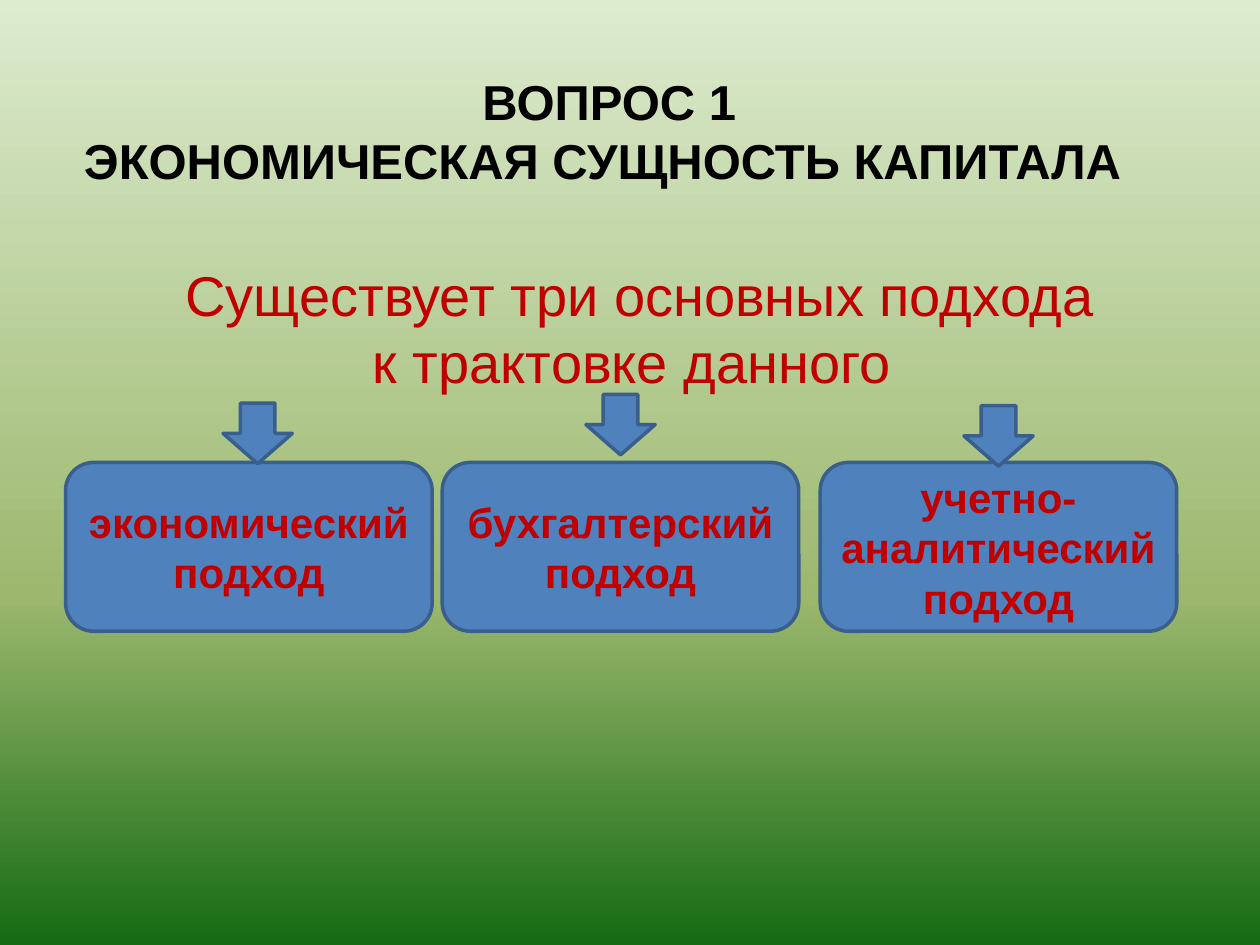
from copy import deepcopy

from pptx import Presentation
from pptx.dml.color import RGBColor
from pptx.enum.shapes import MSO_SHAPE
from pptx.enum.text import MSO_ANCHOR, PP_ALIGN
from pptx.oxml.ns import qn
from pptx.util import Inches, Pt

ROUNDED = MSO_SHAPE.ROUNDED_RECTANGLE
DOWN_ARROW = MSO_SHAPE.DOWN_ARROW
MIDDLE = MSO_ANCHOR.MIDDLE
CENTER = PP_ALIGN.CENTER

BLACK = RGBColor(0x00, 0x00, 0x00)
RED = RGBColor(0xC0, 0x00, 0x00)
BLUE = RGBColor(0x4F, 0x81, 0xBD)
DARK_BLUE = RGBColor(0x3A, 0x5F, 0x8C)
GRADIENT = [
    (0, RGBColor(0xDD, 0xEB, 0xCF)),
    (0.63, RGBColor(0x9C, 0xB8, 0x6E)),
    (1, RGBColor(0x15, 0x6B, 0x13)),
]

TITLE_FONT = {"name": "Arial", "size": Pt(28), "bold": True}
LEAD_FONT = {"name": "Arial", "size": Pt(32), "bold": False}
CARD_FONT = {"name": "Arial", "size": Pt(24), "bold": True}

CARD_TOP, CARD_HEIGHT = 3.67, 1.34
ARROW_WIDTH, ARROW_HEIGHT = 0.55, 0.48
APPROACHES = [
    ("экономический подход", 0.52, 2.91, 1.77, 3.2),
    ("бухгалтерский подход", 3.51, 2.83, 4.65, 3.13),
    ("учетно-аналитический подход", 6.51, 2.83, 7.65, 3.22),
]


def paint_background(slide):
    """Fill the slide with the vertical green gradient."""
    fill = slide.background.fill
    fill.gradient()
    fill.gradient_angle = 270
    stop_list = next(slide.element.iter(qn("a:gsLst")))
    stop_list.insert(1, deepcopy(stop_list[0]))
    for stop, (position, color) in zip(fill.gradient_stops, GRADIENT):
        stop.position = position
        stop.color.rgb = color


def write_lines(tf, lines, font, color):
    """Write each line as a centred paragraph."""
    for i, line in enumerate(lines):
        p = tf.add_paragraph() if i else tf.paragraphs[0]
        p.alignment = CENTER
        r = p.add_run()
        r.text = line
        r.font.color.rgb = color
        for key, value in font.items():
            setattr(r.font, key, value)


def add_heading(slide, box, lines, font, color, wrap):
    """Place a centred text box in the given box."""
    tf = slide.shapes.add_textbox(*map(Inches, box)).text_frame
    tf.word_wrap = wrap
    write_lines(tf, lines, font, color)


def add_blue_shape(slide, kind, box):
    """Place an outlined blue shape in the given box."""
    sp = slide.shapes.add_shape(kind, *map(Inches, box))
    sp.shadow.inherit = False
    sp.fill.solid()
    sp.fill.fore_color.rgb = BLUE
    sp.line.color.rgb = DARK_BLUE
    sp.line.width = Pt(2)
    return sp


def add_card(slide, box, text):
    """Place a rounded card with its approach name."""
    tf = add_blue_shape(slide, ROUNDED, box).text_frame
    tf.word_wrap = True
    tf.vertical_anchor = MIDDLE
    write_lines(tf, [text], CARD_FONT, RED)


def add_approaches(slide):
    """Place the row of cards and the arrows that lead to them."""
    for text, left, width, _, _ in APPROACHES:
        add_card(slide, (left, CARD_TOP, width, CARD_HEIGHT), text)
    for _, _, _, left, top in APPROACHES:
        add_blue_shape(slide, DOWN_ARROW, (left, top, ARROW_WIDTH, ARROW_HEIGHT))


def main():
    """Build the slide and save it."""
    prs = Presentation()
    prs.slide_width, prs.slide_height = Inches(10), Inches(7.5)
    s = prs.slides.add_slide(prs.slide_layouts[6])
    paint_background(s)
    add_heading(s, (0.52, 0.52, 8.63, 1.04),
                ["ВОПРОС 1", "ЭКОНОМИЧЕСКАЯ СУЩНОСТЬ КАПИТАЛА "],
                TITLE_FONT, BLACK, False)
    add_heading(s, (1.22, 2.02, 7.72, 1.18),
                ["Существует три основных подхода к трактовке данного "],
                LEAD_FONT, RED, True)
    add_approaches(s)
    prs.save("out.pptx")


if __name__ == "__main__":
    main()
